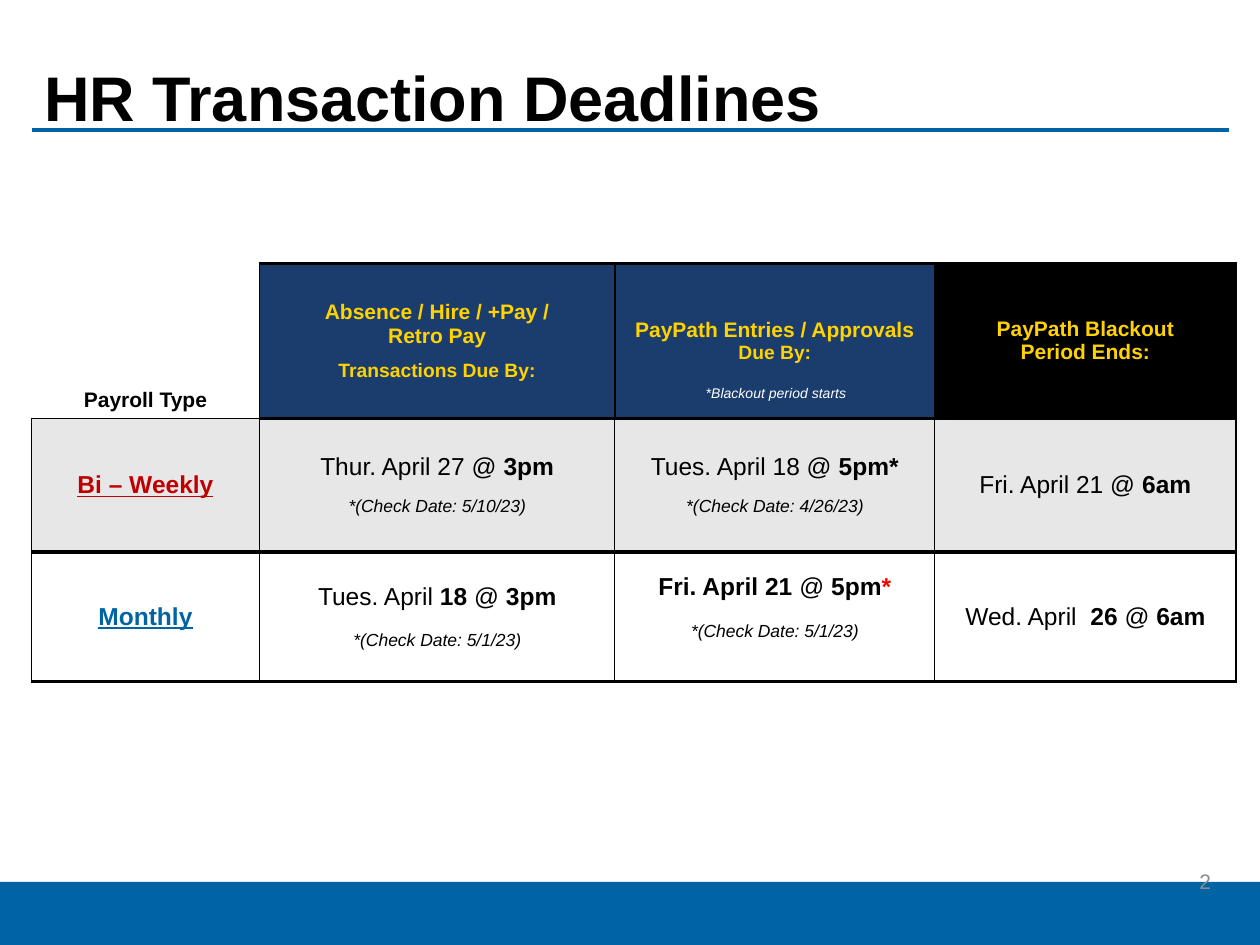
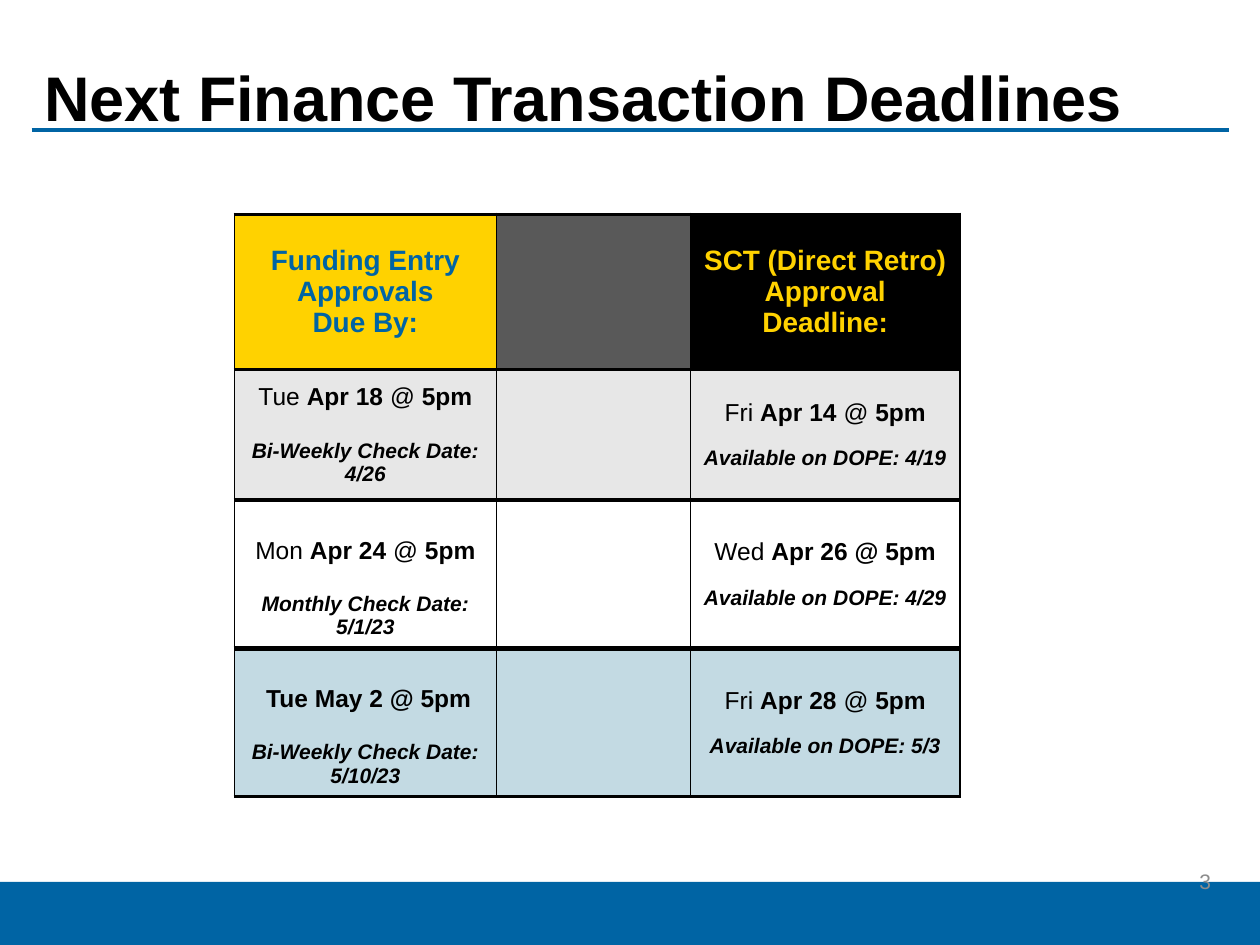
from dataclasses import dataclass

from lxml import etree
from pptx import Presentation
from pptx.dml.color import RGBColor
from pptx.enum.shapes import MSO_CONNECTOR, MSO_SHAPE
from pptx.enum.text import MSO_ANCHOR, MSO_AUTO_SIZE, PP_ALIGN
from pptx.oxml.ns import qn
from pptx.util import Inches, Pt

LEFT, CENTER, RIGHT = PP_ALIGN.LEFT, PP_ALIGN.CENTER, PP_ALIGN.RIGHT
MIDDLE, BOTTOM = MSO_ANCHOR.MIDDLE, MSO_ANCHOR.BOTTOM
FONT = "Arial"
TITLE_ONLY = 5

BLUE = RGBColor(0x00, 0x64, 0xA4)
NAVY = RGBColor(0x1B, 0x3D, 0x6D)
GOLD = RGBColor(0xFF, 0xD2, 0x00)
BLACK = RGBColor(0x00, 0x00, 0x00)
WHITE = RGBColor(0xFF, 0xFF, 0xFF)
PALE_GRAY = RGBColor(0xE7, 0xE7, 0xE7)
DARK_GRAY = RGBColor(0x59, 0x59, 0x59)
NUMBER_GRAY = RGBColor(0x8C, 0x8C, 0x8C)
PALE_BLUE = RGBColor(0xC3, 0xDA, 0xE3)
CRIMSON = RGBColor(0xC0, 0x00, 0x00)
RED = RGBColor(0xFF, 0x00, 0x00)


@dataclass
class Line:
    """One paragraph; each | in the text switches bold on or off."""
    text: str
    size: float = 14
    color: RGBColor = BLACK
    bold: bool = False
    italic: bool = False
    underline: bool = False
    gap: float = 0
    red_mark: str = ""


@dataclass
class Cell:
    lines: tuple = ()
    fill: RGBColor = None
    anchor: MSO_ANCHOR = MIDDLE
    extra_top: float = 0
    extra_bottom: float = 0


# Text
def write_line(paragraph, line, align=CENTER):
    paragraph.alignment = align
    if line.gap:
        paragraph.space_before = Pt(line.gap)
    font = paragraph.font
    font.name, font.size = FONT, Pt(line.size)
    font.italic, font.underline = line.italic, line.underline
    font.color.rgb = line.color
    font.bold = line.bold
    for position, part in enumerate(line.text.split("|")):
        run = paragraph.add_run()
        run.text = part
        if position % 2:
            run.font.bold = True
    if line.red_mark:
        run = paragraph.add_run()
        run.text = line.red_mark
        run.font.bold = True
        run.font.color.rgb = RED


def write_lines(frame, lines, align=CENTER):
    for position, line in enumerate(lines):
        paragraph = frame.add_paragraph() if position else frame.paragraphs[0]
        write_line(paragraph, line, align)


def add_text(slide, box, line, align=CENTER, anchor=None):
    frame = slide.shapes.add_textbox(*map(Inches, box)).text_frame
    frame.word_wrap = True
    frame.vertical_anchor = anchor
    write_line(frame.paragraphs[0], line, align)


# Shared slide frame: title, rule, footer band and number
def add_framed_slide(prs, heading, number):
    slide = prs.slides.add_slide(prs.slide_layouts[TITLE_ONLY])

    rule = slide.shapes.add_connector(
        MSO_CONNECTOR.STRAIGHT, Inches(0.25), Inches(1.03), Inches(9.75), Inches(1.03))
    rule.line.color.rgb = BLUE
    rule.line.width = Pt(2.25)
    etree.SubElement(rule._element.spPr, qn("a:effectLst"))

    band = slide.shapes.add_shape(
        MSO_SHAPE.RECTANGLE, 0, Inches(7), prs.slide_width, Inches(0.5))
    band.shadow.inherit = False
    band.fill.solid()
    band.fill.fore_color.rgb = BLUE
    band.line.fill.background()

    title = slide.shapes.title
    title.left, title.top = Inches(0.25), Inches(0.31)
    title.width, title.height = Inches(9.5), Inches(0.98)
    frame = title.text_frame
    frame.auto_size = MSO_AUTO_SIZE.NONE
    frame.vertical_anchor = MIDDLE
    write_line(frame.paragraphs[0], Line(heading, 36, bold=True), LEFT)
    frame.paragraphs[0].line_spacing = 0.9

    add_text(slide, (7.46, 6.79, 2.25, 0.4),
             Line(str(number), 12, NUMBER_GRAY), RIGHT, MIDDLE)
    return slide


# Deadline tables
def set_borders(cell, widths):
    properties = cell._tc.get_or_add_tcPr()
    for position, (side, width) in enumerate(zip("LRTB", widths)):
        edge = etree.Element(qn(f"a:ln{side}"), w=str(Pt(width)))
        if width:
            fill = etree.SubElement(edge, qn("a:solidFill"))
            etree.SubElement(fill, qn("a:srgbClr"), val=str(BLACK))
        else:
            etree.SubElement(edge, qn("a:noFill"))
        properties.insert(position, edge)


def border_widths(row, column, row_count, column_count, open_corner):
    """Left, right, top and bottom widths of one cell in points."""
    if open_corner and (row, column) == (0, 0):
        return 0, 1, 0, 1

    def vertical(edge):
        return 1 if row == 0 or edge in (0, column_count) else 0.5

    def horizontal(edge):
        if open_corner and column == 0 and edge == 1:
            return 1
        return 2 if edge in (0, 1, row_count) else 3

    return vertical(column), vertical(column + 1), horizontal(row), horizontal(row + 1)


def add_deadline_table(slide, left, top, widths, heights, rows, open_corner=False):
    table = slide.shapes.add_table(
        len(heights), len(widths), Inches(left), Inches(top),
        Inches(sum(widths)), Inches(sum(heights))).table
    table.first_row = table.horz_banding = False
    for column, width in zip(table.columns, widths):
        column.width = Inches(width)
    for table_row, height in zip(table.rows, heights):
        table_row.height = Inches(height)
    for r, row in enumerate(rows):
        for c, content in enumerate(row):
            cell = table.cell(r, c)
            if content.fill is None:
                cell.fill.background()
            else:
                cell.fill.solid()
                cell.fill.fore_color.rgb = content.fill
            cell.vertical_anchor = content.anchor
            cell.margin_top = Inches(0.05 + content.extra_top)
            cell.margin_bottom = Inches(0.05 + content.extra_bottom)
            write_lines(cell.text_frame, content.lines)
            set_borders(cell, border_widths(
                r, c, len(heights), len(widths), open_corner))


def header(fill, *lines):
    return Cell(lines, fill)


def gold(text, size=12, gap=0):
    return Line(text, size, GOLD, bold=True, gap=gap)


def check_date(date, gap):
    return Line(f"*(Check Date: {date})", 10, italic=True, gap=gap)


def finance_note(text, gap):
    return Line(text, 12, bold=True, italic=True, gap=gap)


def finance_row(fill, funding, check, approval, available, extra_top=0):
    return (
        Cell((funding, finance_note(f"{check}", 16)), fill, extra_top=extra_top),
        Cell(fill=fill),
        Cell((Line(approval), finance_note(f"Available on DOPE: {available}", 11.5)), fill),
    )


def build_hr_slide(prs):
    slide = add_framed_slide(prs, "HR Transaction Deadlines", 2)
    rows = (
        (Cell((Line("Payroll Type", 12, bold=True),), anchor=BOTTOM),
         header(NAVY, gold("Absence / Hire / +Pay /"), gold("Retro Pay"),
                gold("Transactions Due By:", 11, gap=7)),
         header(NAVY, gold("PayPath Entries / Approvals"), gold("Due By:", 11)),
         header(BLACK, gold("PayPath Blackout"), gold("Period Ends:"))),
        (Cell((Line("Bi – Weekly", color=CRIMSON, bold=True, underline=True),), PALE_GRAY),
         Cell((Line("Thur. April 27 @ |3pm"), check_date("5/10/23", 9)), PALE_GRAY),
         Cell((Line("Tues. April 18 @ |5pm*"), check_date("4/26/23", 9)), PALE_GRAY),
         Cell((Line("Fri. April 21 @ |6am"),), PALE_GRAY)),
        (Cell((Line("Monthly", color=BLUE, bold=True, underline=True),), WHITE),
         Cell((Line("Tues. April| 18 |@ |3pm"), check_date("5/1/23", 11.5)), WHITE),
         Cell((Line("|Fri. April 21 |@ |5pm", red_mark="*"), check_date("5/1/23", 11.5)),
              WHITE, extra_bottom=0.15),
         Cell((Line("Wed. April | 26 |@ |6am"),), WHITE)),
    )
    add_deadline_table(slide, 0.25, 2.09, (1.81, 2.82, 2.54, 2.39),
                       (1.23, 1.06, 1.03), rows, open_corner=True)
    add_text(slide, (5.18, 3, 1.96, 0.24),
             Line("*Blackout period starts", 8, WHITE, italic=True))


def build_finance_slide(prs):
    slide = add_framed_slide(prs, "Next Finance Transaction Deadlines", 3)
    rows = (
        (header(GOLD, Line("Funding Entry Approvals", 16, BLUE, bold=True),
                Line("Due By:", 16, BLUE, bold=True)),
         Cell(fill=DARK_GRAY),
         header(BLACK, gold("SCT (Direct Retro)", 16), gold("Approval Deadline:", 16))),
        finance_row(PALE_GRAY, Line("Tue |Apr 18 |@ |5pm"),
                    "Bi-Weekly Check Date: 4/26", "Fri |Apr 14 |@ |5pm", "4/19"),
        finance_row(WHITE, Line("Mon |Apr 24 |@ |5pm"),
                    "Monthly Check Date: 5/1/23", "Wed |Apr 26 @ 5pm", "4/29", 0.22),
        finance_row(PALE_BLUE, Line(" Tue May 2 @ 5pm", bold=True),
                    "Bi-Weekly Check Date: 5/10/23", "Fri |Apr 28 |@ |5pm", "5/3", 0.22),
    )
    add_deadline_table(slide, 1.86, 1.7, (2.08, 1.54, 2.14),
                       (1.23, 1.04, 1.13, 1.13), rows)


def main():
    prs = Presentation()
    prs.slide_width, prs.slide_height = Inches(10), Inches(7.5)
    build_hr_slide(prs)
    build_finance_slide(prs)
    prs.save("out.pptx")


if __name__ == "__main__":
    main()
